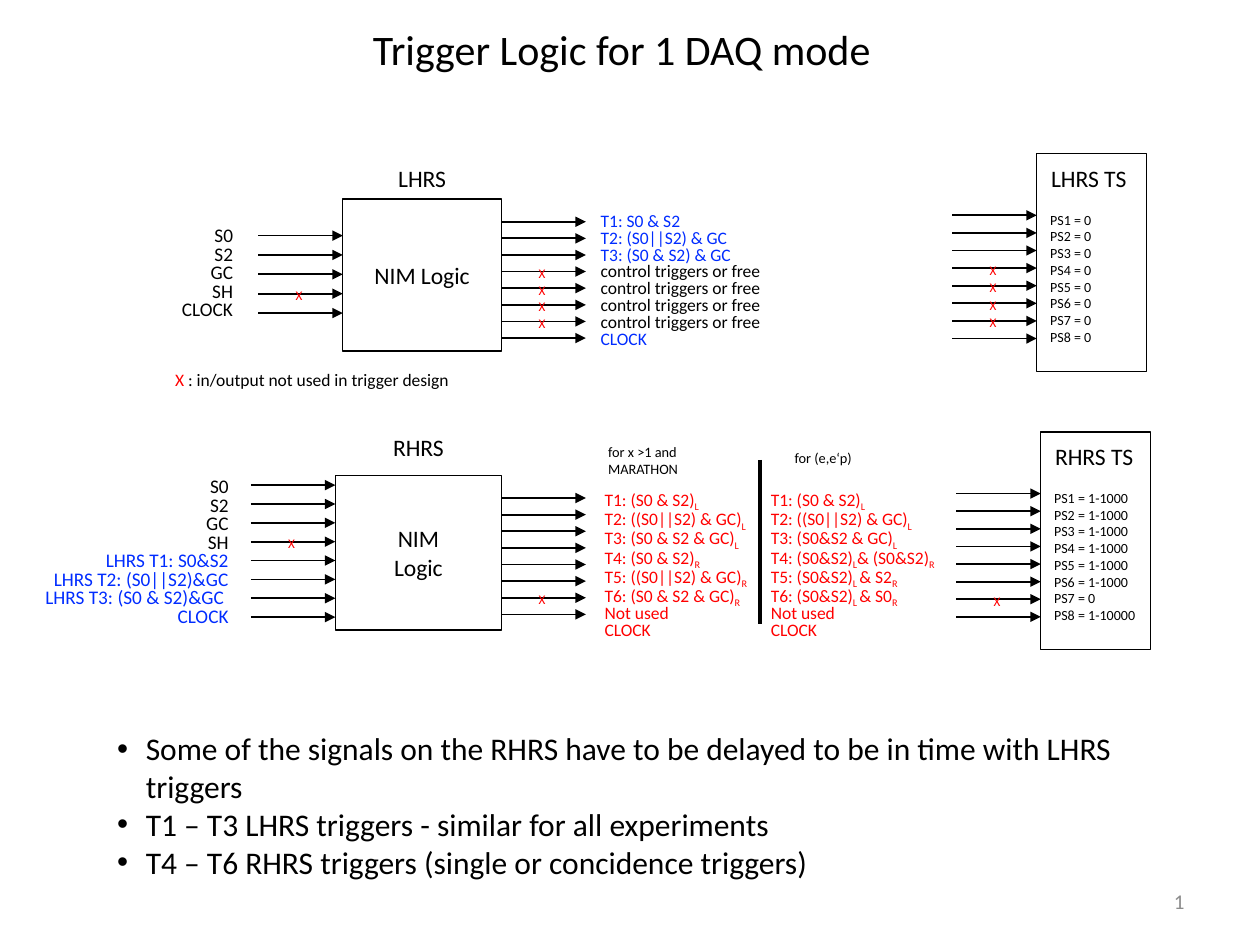
import pptx
import pptx.util
import pptx.dml.color
import pptx.enum.shapes
import pptx.enum.text
import pptx.oxml.ns
import lxml.etree

Cm = pptx.util.Cm
ALIGN = pptx.enum.text.PP_ALIGN
INK = {"black": "000000", "blue": "002CFF", "red": "FF0000",
       "gray": "8C8C8C", "white": "FFFFFF"}


def rgb(name):
    """Return the named colour."""
    return pptx.dml.color.RGBColor.from_string(INK[name])


def child(node, tag, **attrs):
    """Append a drawing element to a node."""
    return lxml.etree.SubElement(node, pptx.oxml.ns.qn(tag), **attrs)


def write(frame, rows, size, align=ALIGN.LEFT, space=None, mid=False, wrap=True):
    """Fill a frame with rows of (text, colour) runs; ~ toggles subscript."""
    frame.word_wrap = wrap
    anchor = pptx.enum.text.MSO_ANCHOR
    frame.vertical_anchor = anchor.MIDDLE if mid else anchor.TOP
    for i, row in enumerate(rows):
        para = frame.paragraphs[0] if i == 0 else frame.add_paragraph()
        para.alignment = align
        if space:
            para.line_spacing = space
        for text, ink in row:
            for j, part in enumerate(text.split("~")):
                if not part:
                    continue
                run = para.add_run()
                run.text = part
                run.font.name = "Calibri"
                run.font.size = pptx.util.Pt(size)
                run.font.color.rgb = rgb(ink)
                if j % 2:
                    run.font._element.set("baseline", "-25000")


def plain(lines, ink="black"):
    """Turn lines into one-run rows of one colour."""
    return [[(line, ink)] for line in lines]


def label(slide, box, rows, size, **style):
    """Place a text box."""
    frame = slide.shapes.add_textbox(*map(Cm, box)).text_frame
    write(frame, rows, size, **style)
    return frame


def block(slide, box, lines=()):
    """Place an outlined box with centred text."""
    kind = pptx.enum.shapes.MSO_SHAPE.RECTANGLE
    shape = slide.shapes.add_shape(kind, *map(Cm, box))
    shape.shadow.inherit = False
    shape.fill.solid()
    shape.fill.fore_color.rgb = rgb("white")
    shape.line.color.rgb = rgb("black")
    shape.line.width = pptx.util.Pt(0.75)
    write(shape.text_frame, plain(lines), 13.5, align=ALIGN.CENTER, mid=True)


def rule(slide, ends, width=1, arrow=True):
    """Draw a straight line, with an arrowhead if asked."""
    kind = pptx.enum.shapes.MSO_CONNECTOR.STRAIGHT
    line = slide.shapes.add_connector(kind, *map(Cm, ends))
    line.line.color.rgb = rgb("black")
    line.line.width = pptx.util.Pt(width)
    if arrow:
        child(line.line._get_or_add_ln(), "a:tailEnd", type="triangle")
    child(line._element.spPr, "a:effectLst")


def bank(slide, x, y, step, count, marks):
    """Stack arrows from a start point and cross out the marked ones."""
    for i in range(count):
        top = y + i * step
        rule(slide, (x, top, x + 1.7, top))
        if i in marks:
            label(slide, (x + 0.5, top - 0.25, 1.3, 0.58), plain("X", "red"), 7.5)


def logic(slide, box, name, lines, head, feed, marks):
    """Build a logic box with its heading, inputs and outputs."""
    x, y, w, h = box
    first, step, count = feed
    block(slide, box, lines)
    label(slide, (x, y + head, w, 0.84), plain([name]), 13.5, align=ALIGN.CENTER)
    bank(slide, x - 1.7, y + first, step, count, [3])
    bank(slide, x + w, y + 0.46, 0.335, 8, marks)


def super(slide, x, y, name, rates, marks):
    """Build a trigger supervisor box with its arrows and prescales."""
    block(slide, (x, y, 2.21, 4.39))
    label(slide, (x + 0.04, y + 0.08, 2.2, 0.84), plain([name]), 13.5)
    rows = plain(f"PS{i} = {rate}" for i, rate in enumerate(rates, 1))
    label(slide, (x + 0.02, y + 1.03, 2.67, 3.3), rows, 8)
    bank(slide, x - 1.7, y + 1.24, 0.355, 8, marks)


def left(slide, y):
    """Build the LHRS row from its top edge."""
    logic(slide, (6.91, y + 0.91, 3.2, 3.07), "LHRS", ["NIM Logic"],
          -0.83, (0.74, 0.39, 5), [3, 4, 5, 6])
    label(slide, (3.4, y + 1.37, 1.55, 2.16),
          plain(["S0", "S2", "GC", "SH", "CLOCK"]), 11,
          align=ALIGN.RIGHT, space=0.8, wrap=False)
    rows = plain(["T1: S0 & S2", "T2: (S0||S2) & GC", "T3: (S0 & S2) & GC"], "blue")
    rows += plain(["control triggers or free"] * 4) + plain(["CLOCK"], "blue")
    label(slide, (11.86, y + 1.09, 4.8, 3), rows, 10, space=0.8)
    super(slide, 20.9, y, "LHRS TS", [0] * 8, [3, 4, 5, 6])
    note = [("X ", "red"), (": in/output not used in trigger design", "black")]
    label(slide, (3.28, y + 4.22, 6.05, 0.69), [note], 10)


def right(slide, y):
    """Build the RHRS row from its top edge."""
    logic(slide, (6.76, y + 0.87, 3.35, 3.12), "RHRS", ["NIM", "Logic"],
          -0.97, (0.2, 0.38, 8), [6])
    rows = plain(["S0", "S2", "GC", "SH"])
    rows += plain(["LHRS T1: S0&S2", "LHRS T2: (S0||S2)&GC",
                   "LHRS T3: (S0 & S2)&GC ", "CLOCK"], "blue")
    label(slide, (0.41, y + 0.82, 4.45, 3.28), rows, 11,
          align=ALIGN.RIGHT, space=0.8)
    label(slide, (12.01, y + 0.1, 2.31, 0.97), plain(["for x >1 and MARATHON"]), 8.2)
    label(slide, (15.77, y + 0.23, 2.31, 0.61), plain(["for (e,e‘p)"]), 8.2)
    base = ["T1: (S0 & S2)~L", "T2: ((S0||S2) & GC)~L"]
    rest = ["Not used", "CLOCK"]
    solo = ["T3: (S0 & S2 & GC)~L", "T4: (S0 & S2)~R",
            "T5: ((S0||S2) & GC)~R", "T6: (S0 & S2 & GC)~R"]
    pair = ["T3: (S0&S2 & GC)~L", "T4: (S0&S2)~L~& (S0&S2)~R",
            "T5: (S0&S2)~L ~& S2~R", "T6: (S0&S2)~L ~& S0~R"]
    for x, w, lines in ((11.94, 3.53, solo), (15.29, 4.37, pair)):
        label(slide, (x, y + 1.07, w, 3), plain(base + lines + rest, "red"),
              10, space=0.8)
    rule(slide, (15.32, y + 0.56, 15.32, y + 3.86), 2, False)
    super(slide, 20.98, y, "RHRS TS", ["1-1000"] * 6 + ["0", "1-10000"], [6])


def notes(slide, box):
    """Place the bulleted remarks."""
    lines = ["Some of the signals on the RHRS have to be delayed to be in time "
             "with LHRS triggers",
             "T1 – T3 LHRS triggers - similar for all experiments",
             "T4 – T6 RHRS triggers (single or concidence triggers)"]
    for para in label(slide, box, plain(lines), 18).paragraphs:
        props = para._p.get_or_add_pPr()
        props.set("marL", str(Cm(0.58)))
        props.set("indent", str(-Cm(0.58)))
        child(props, "a:buFont", typeface="Arial")
        child(props, "a:buChar", char="•")


def main():
    """Build and save the slide."""
    deck = pptx.Presentation()
    deck.slide_width, deck.slide_height = Cm(25.4), Cm(19.05)
    slide = deck.slides.add_slide(deck.slide_layouts[6])
    label(slide, (3.96, 0.61, 17.15, 0.76), plain(["Trigger Logic for 1 DAQ mode"]),
          24, align=ALIGN.CENTER, mid=True)
    left(slide, 3.1)
    right(slide, 8.71)
    notes(slide, (2.11, 14.58, 22.12, 3.43))
    label(slide, (18.21, 17.65, 5.92, 1.02), plain("1", "gray"), 12,
          align=ALIGN.RIGHT, mid=True)
    deck.save("out.pptx")


if __name__ == "__main__":
    main()
